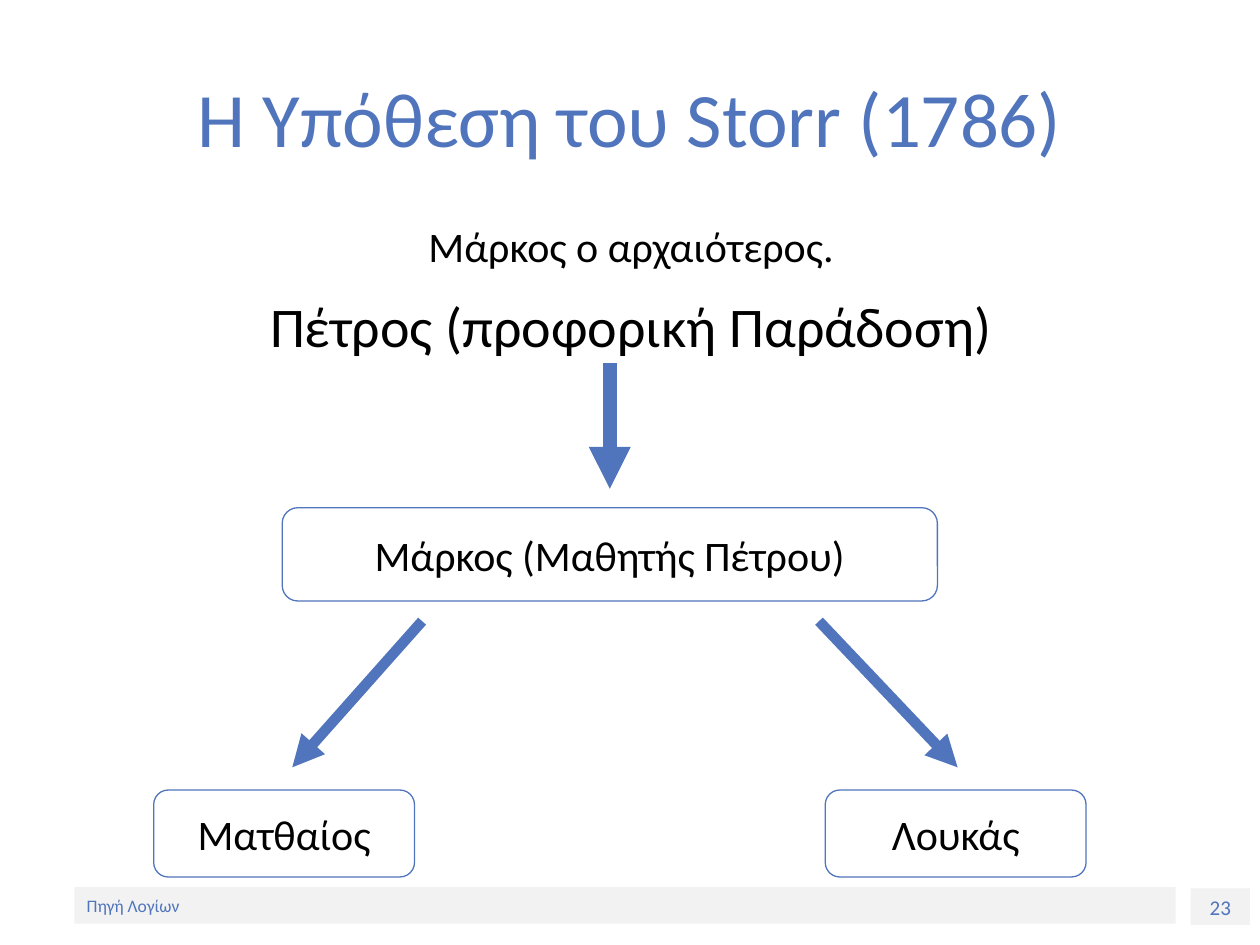
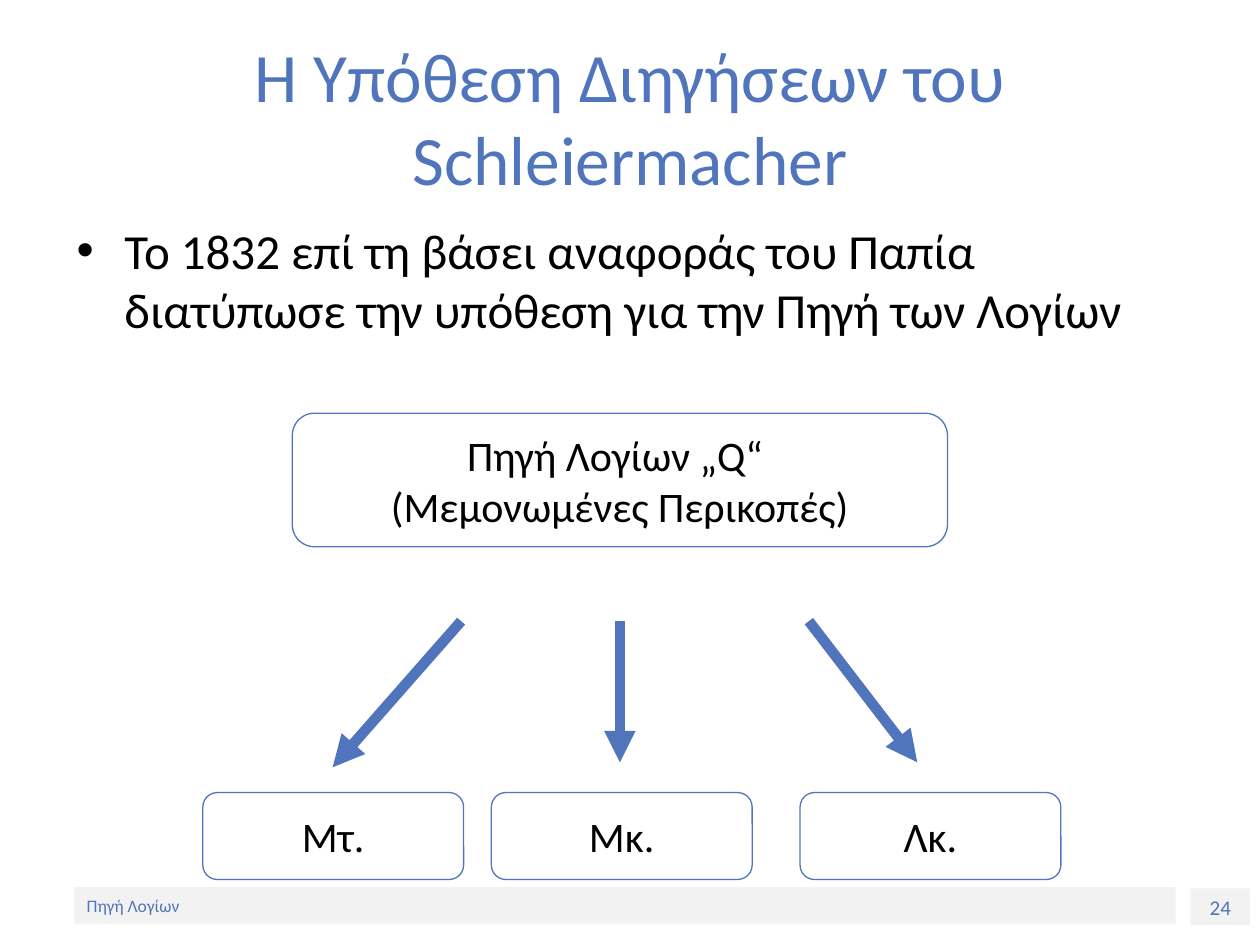
from lxml.etree import SubElement
from pptx import Presentation
from pptx.dml.color import RGBColor
from pptx.enum.shapes import MSO_CONNECTOR, MSO_SHAPE
from pptx.enum.text import MSO_ANCHOR, MSO_AUTO_SIZE, PP_ALIGN
from pptx.oxml.ns import qn
from pptx.util import Inches, Pt

COLOURS = {"blue": "5075BC", "band": "F2F2F2", "text": "000000"}
FONT = "Calibri"
FOOTER = "Πηγή Λογίων"
TITLE_AREA = (0.5, 0.3, 9, 1.25)
BODY_AREA = (0.51, 1.7, 9, 4.95)
FRAME = {"word_wrap": True, "auto_size": MSO_AUTO_SIZE.NONE, "vertical_anchor": MSO_ANCHOR.MIDDLE}
BOX_FRAME = FRAME | {
    "word_wrap": False,
    "margin_left": Inches(0.14), "margin_right": Inches(0.14),
    "margin_top": Inches(0.07), "margin_bottom": Inches(0.07),
}
BOX_SIZE = (2.07, 0.69)

SLIDES = [
    {
        "number": "23",
        "title": ("Η Υπόθεση του Storr (1786)", 44),
        "body": [("Μάρκος ο αρχαιότερος.", 24), ("Πέτρος (προφορική Παράδοση)", 32)],
        "bulleted": False,
        "boxes": [
            ((1.22, 6.27, *BOX_SIZE), ["Ματθαίος"]),
            ((6.55, 6.27, *BOX_SIZE), ["Λουκάς"]),
            ((2.24, 4.03, 5.2, 0.74), ["Mάρκος (Μαθητής Πέτρου)"]),
        ],
        "arrows": [
            ((4.84, 2.88, 4.84, 3.88), 8),
            ((3.35, 4.93, 2.32, 6.09), 6),
            ((6.5, 4.93, 7.6, 6.09), 6),
        ],
    },
    {
        "number": "24",
        "title": ("Η Υπόθεση Διηγήσεων του Schleiermacher", 39.6),
        "body": [("Το 1832 επί τη βάσει αναφοράς του Παπία διατύπωσε την υπόθεση για την Πηγή των Λογίων", 28)],
        "bulleted": True,
        "boxes": [
            ((2.32, 3.28, 5.2, 1.06), ["Πηγή Λογίων „Q“ ", "(Μεμονωμένες Περικοπές)"]),
            ((1.61, 6.29, *BOX_SIZE), ["Μτ."]),
            ((3.9, 6.29, *BOX_SIZE), ["Μκ."]),
            ((6.35, 6.29, *BOX_SIZE), ["Λκ."]),
        ],
        "arrows": [
            ((3.66, 4.93, 2.64, 6.09), 6),
            ((6.42, 4.93, 7.28, 6.05), 6),
            ((4.92, 4.93, 4.92, 6.05), 6),
        ],
    },
]


def write_text(shape, lines, colour, alignment, frame_format, gap=0, bulleted=False):
    frame = shape.text_frame
    for name, value in frame_format.items():
        setattr(frame, name, value)
    for index, (text, size) in enumerate(lines):
        paragraph = frame.paragraphs[0] if index == 0 else frame.add_paragraph()
        paragraph.text = text
        paragraph.alignment = alignment
        paragraph.space_before = Pt(gap if index else 0)
        if bulleted:
            properties = paragraph._p.get_or_add_pPr()
            properties.set("marL", str(Inches(0.38)))
            properties.set("indent", str(Inches(-0.38)))
            SubElement(properties, qn("a:buFont"), typeface="Arial")
            SubElement(properties, qn("a:buChar"), char="•")
        for name, value in {"name": FONT, "size": Pt(size)}.items():
            setattr(paragraph.font, name, value)
        paragraph.font.color.rgb = RGBColor.from_string(COLOURS[colour])


def add_panel(slide, kind, area, fill=None):
    shape = slide.shapes.add_shape(kind, *map(Inches, area))
    shape.shadow.inherit = False
    if fill:
        shape.fill.solid()
        shape.fill.fore_color.rgb = RGBColor.from_string(COLOURS[fill])
        shape.line.fill.background()
    else:
        shape.fill.background()
        shape.line.color.rgb = RGBColor.from_string(COLOURS["blue"])
        shape.line.width = Pt(0.75)
    return shape


presentation = Presentation()
presentation.slide_width = Inches(10)
presentation.slide_height = Inches(7.5)

for content in SLIDES:
    slide = presentation.slides.add_slide(presentation.slide_layouts[5])

    number = add_panel(slide, MSO_SHAPE.RECTANGLE, (9.45, 7.05, 0.47, 0.29), "band")
    number_frame = FRAME | {"vertical_anchor": MSO_ANCHOR.TOP}
    write_text(number, [(content["number"], 12)], "blue", PP_ALIGN.CENTER, number_frame)
    footer = add_panel(slide, MSO_SHAPE.RECTANGLE, (0.59, 7.04, 8.74, 0.29), "band")
    write_text(footer, [(FOOTER, 10)], "blue", PP_ALIGN.LEFT, FRAME)

    title = slide.shapes.title
    for name, value in zip(("left", "top", "width", "height"), TITLE_AREA):
        setattr(title, name, Inches(value))
    write_text(title, [content["title"]], "blue", PP_ALIGN.CENTER, FRAME)

    body = slide.shapes.add_textbox(*map(Inches, BODY_AREA))
    alignment = PP_ALIGN.LEFT if content["bulleted"] else PP_ALIGN.CENTER
    body_frame = FRAME | {"vertical_anchor": MSO_ANCHOR.TOP}
    write_text(body, content["body"], "text", alignment, body_frame, 12, content["bulleted"])

    for area, lines in content["boxes"]:
        box = add_panel(slide, MSO_SHAPE.ROUNDED_RECTANGLE, area)
        write_text(box, [(line, 24) for line in lines], "text", PP_ALIGN.CENTER, BOX_FRAME)

    for ends, width in content["arrows"]:
        arrow = slide.shapes.add_connector(MSO_CONNECTOR.STRAIGHT, *map(Inches, ends))
        arrow.line.color.rgb = RGBColor.from_string(COLOURS["blue"])
        arrow.line.width = Pt(width)
        SubElement(arrow.line._get_or_add_ln(), qn("a:tailEnd"), type="triangle")
        SubElement(arrow._element.spPr, qn("a:effectLst"))

presentation.save("out.pptx")
